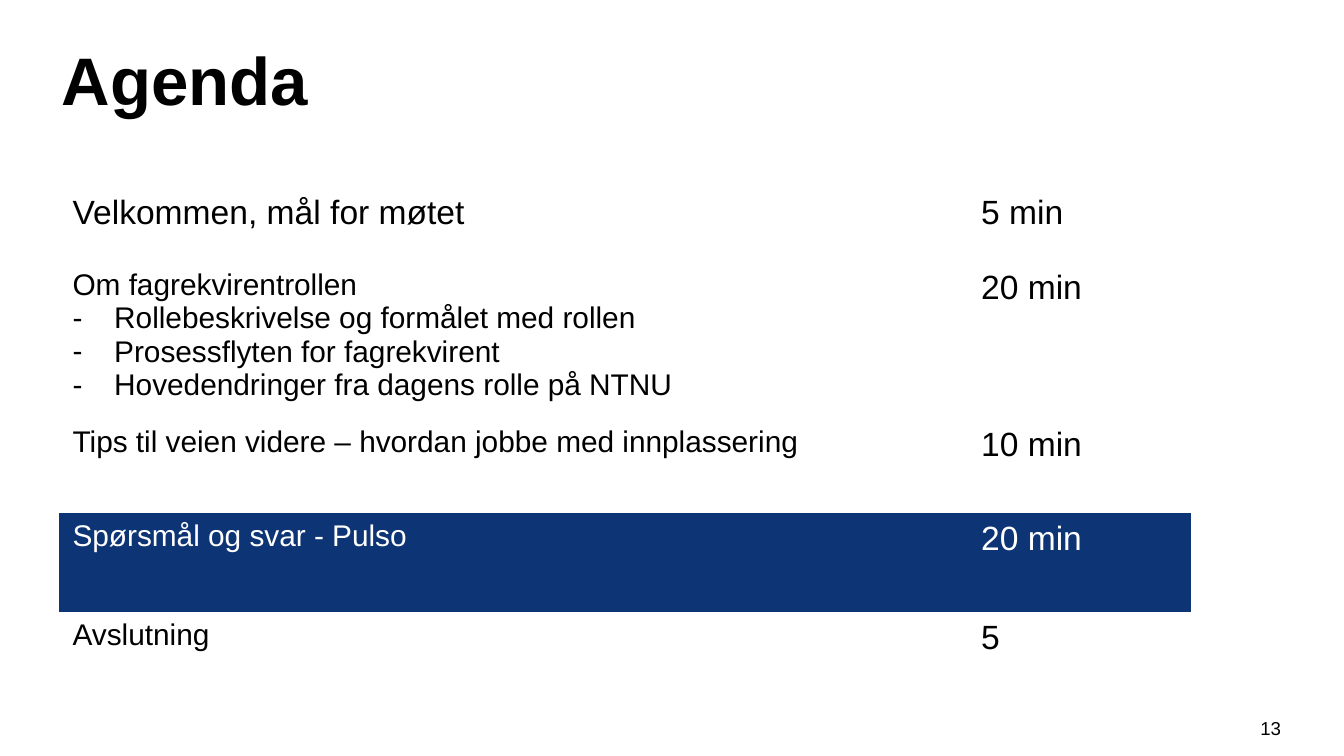
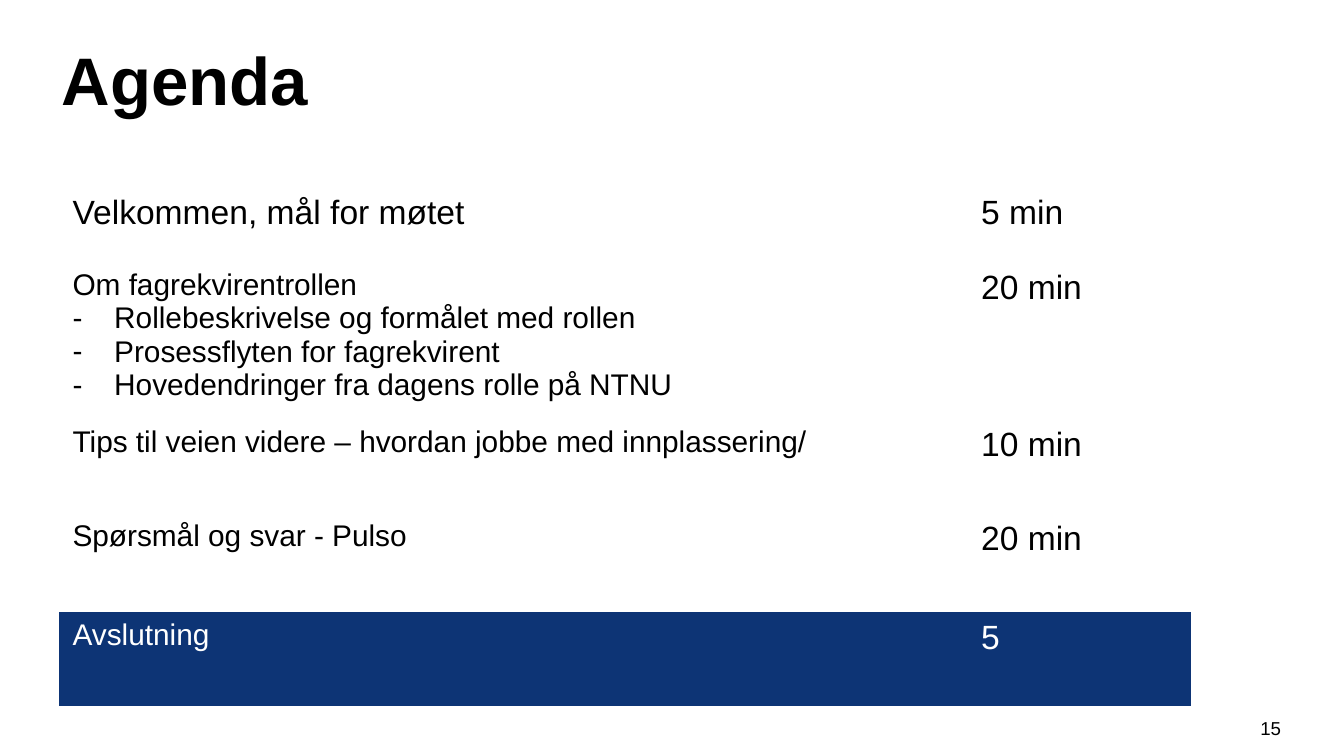
from lxml import etree
from pptx import Presentation
from pptx.dml.color import RGBColor
from pptx.enum.text import MSO_ANCHOR as ANCHOR, PP_ALIGN as ALIGN
from pptx.oxml.ns import qn
from pptx.util import Inches, Pt

COLORS = {"text": "000000", "page": "FFFFFF", "highlight": "0D3475"}
FONT = "Arial"
NO_STYLE_NO_GRID = "{2D5ABB26-0587-4C30-8999-92F81FD0307C}"
TITLE_BOX = (0.36, 0.23, 9.17, 0.71)
NUMBER_BOX = (9.27, 5.27, 0.37, 0.3)
AGENDA_BOX = (0.44, 1.39, 8.42, 3.86)
TIME_WIDTH = 1.66
ROW_HEIGHTS = (0.56, 0.44, 0.7, 0.74, 0.7)  # the second row grows with its list
DASH_INDENT = 0.31


def color(name):
    return RGBColor.from_string(COLORS[name])


def inches(box):
    return [Inches(length) for length in box]


def add_dash(paragraph):
    properties = paragraph._p.get_or_add_pPr()
    properties.set("marL", str(Inches(DASH_INDENT)))
    properties.set("indent", str(-Inches(DASH_INDENT)))
    etree.SubElement(properties, qn("a:buFont")).set("typeface", FONT)
    etree.SubElement(properties, qn("a:buChar")).set("char", "-")


def write(paragraph, text, size, ink="text", bold=False, align=ALIGN.LEFT, dash=False):
    if dash:
        add_dash(paragraph)
    paragraph.alignment = align
    paragraph.font.size = Pt(size)
    run = paragraph.add_run()
    run.text = text
    run.font.name = FONT
    run.font.size = Pt(size)
    run.font.bold = bold
    run.font.color.rgb = color(ink)
    etree.SubElement(paragraph._p, qn("a:endParaRPr")).set("sz", str(size * 100))


def add_title(slide, box, text):
    title = slide.shapes.title
    title.left, title.top, title.width, title.height = inches(box)
    title.text_frame.vertical_anchor = ANCHOR.MIDDLE
    write(title.text_frame.paragraphs[0], text, 36, bold=True)


def add_page_number(slide, box, number):
    frame = slide.shapes.add_textbox(*inches(box)).text_frame
    frame.word_wrap = True
    frame.vertical_anchor = ANCHOR.MIDDLE
    write(frame.paragraphs[0], str(number), 10, align=ALIGN.CENTER)


def add_agenda(slide, box, items, current):
    """Tabulate (topic, subtopics, time, size) items, highlighting row `current`."""
    holder = slide.shapes.add_table(len(items), 2, *inches(box))
    agenda = holder.table
    agenda.first_row = agenda.horz_banding = False
    agenda._tbl.tblPr.find(qn("a:tableStyleId")).text = NO_STYLE_NO_GRID
    for column, width in zip(agenda.columns, (box[2] - TIME_WIDTH, TIME_WIDTH)):
        column.width = Inches(width)

    for index, (topic, subtopics, time, size) in enumerate(items):
        row = agenda.rows[index]
        row.height = Inches(ROW_HEIGHTS[index])
        fill, ink = ("highlight", "page") if index == current else ("page", "text")
        for cell in row.cells:
            cell.fill.solid()
            cell.fill.fore_color.rgb = color(fill)
        topic_frame, time_frame = (cell.text_frame for cell in row.cells)
        write(topic_frame.paragraphs[0], topic, size, ink)
        for subtopic in subtopics:
            write(topic_frame.add_paragraph(), subtopic, size, ink, dash=True)
        write(time_frame.paragraphs[0], time, 18, ink)
    holder.height = Inches(box[3])


def agenda_items(tips_ending=""):
    role_topics = (
        "Rollebeskrivelse og formålet med rollen",
        "Prosessflyten for fagrekvirent",
        "Hovedendringer fra dagens rolle på NTNU",
    )
    tips = "Tips til veien videre – hvordan jobbe med innplassering" + tips_ending
    return [
        ("Velkommen, mål for møtet", (), "5 min", 18),
        ("Om fagrekvirentrollen", role_topics, "20 min", 16),
        (tips, (), "10 min", 16),
        ("Spørsmål og svar - Pulso", (), "20 min", 16),
        ("Avslutning", (), "5", 16),
    ]


def add_agenda_slide(deck, number, items, current):
    slide = deck.slides.add_slide(deck.slide_layouts.get_by_name("Title Only"))
    slide.background.fill.solid()
    slide.background.fill.fore_color.rgb = color("page")
    add_page_number(slide, NUMBER_BOX, number)
    add_title(slide, TITLE_BOX, "Agenda")
    add_agenda(slide, AGENDA_BOX, items, current)


def main():
    deck = Presentation()
    deck.slide_width = Inches(10)
    deck.slide_height = deck.slide_width * 9 // 16
    add_agenda_slide(deck, 13, agenda_items(), current=3)
    add_agenda_slide(deck, 15, agenda_items(tips_ending="/"), current=4)
    deck.save("out.pptx")


if __name__ == "__main__":
    main()
